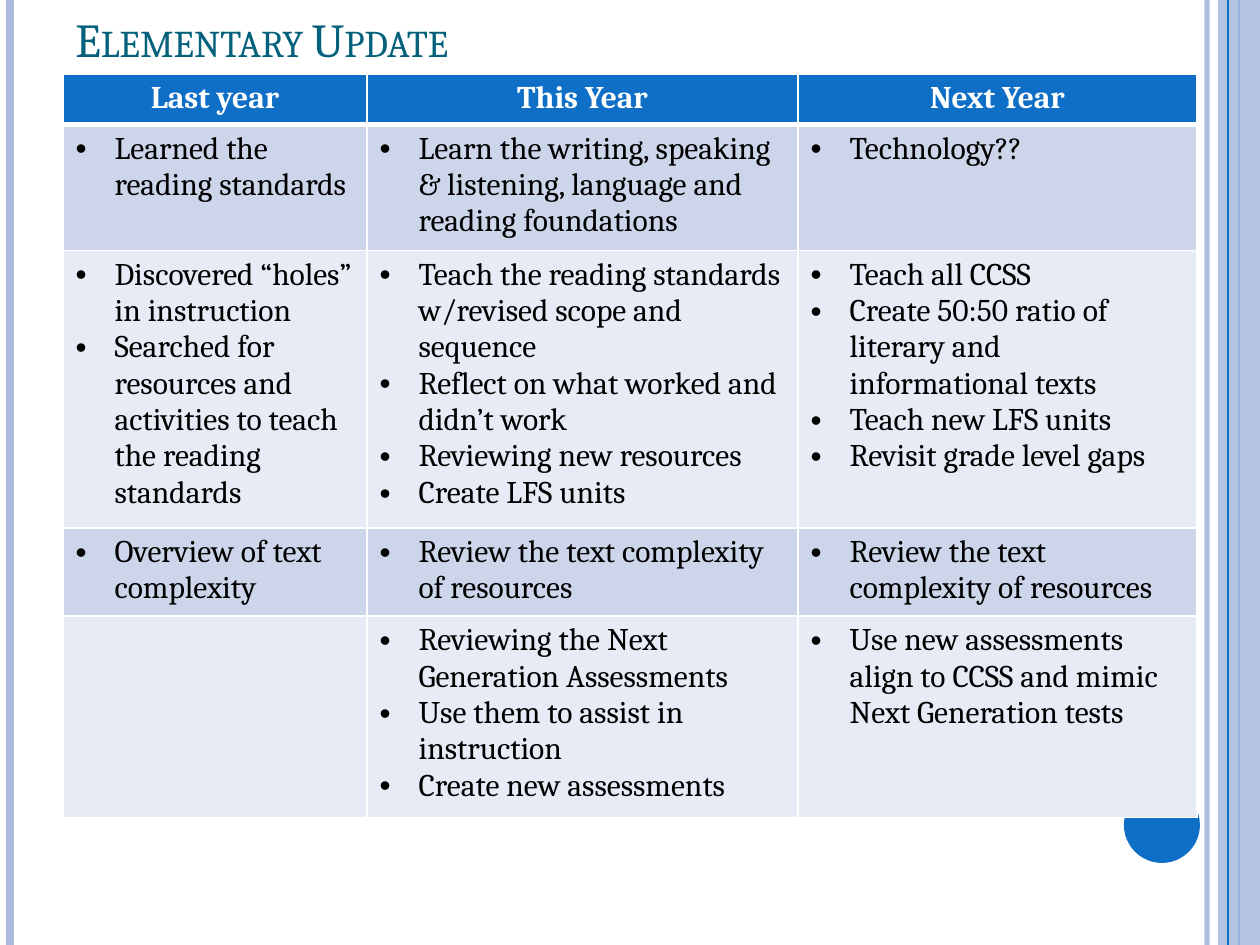
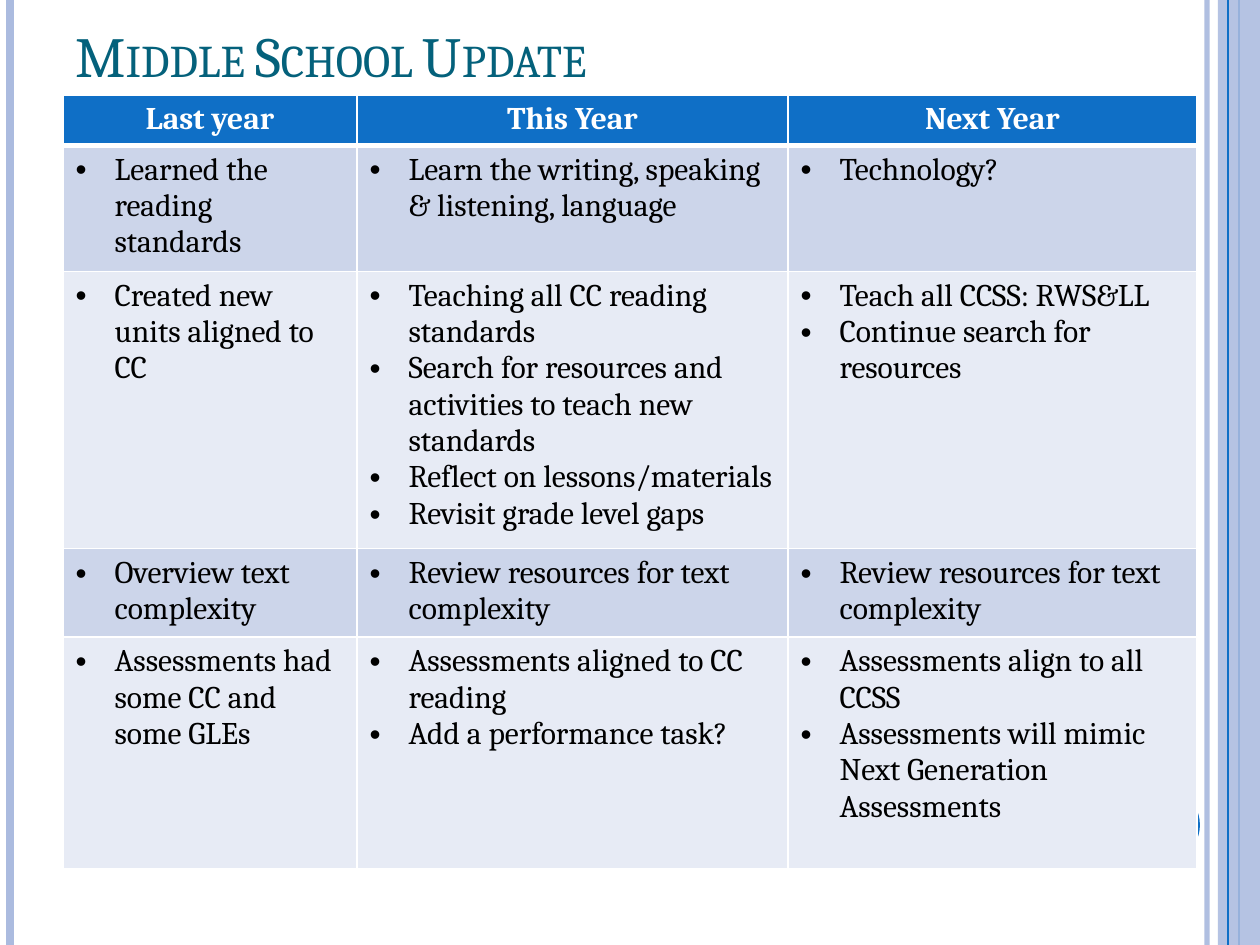
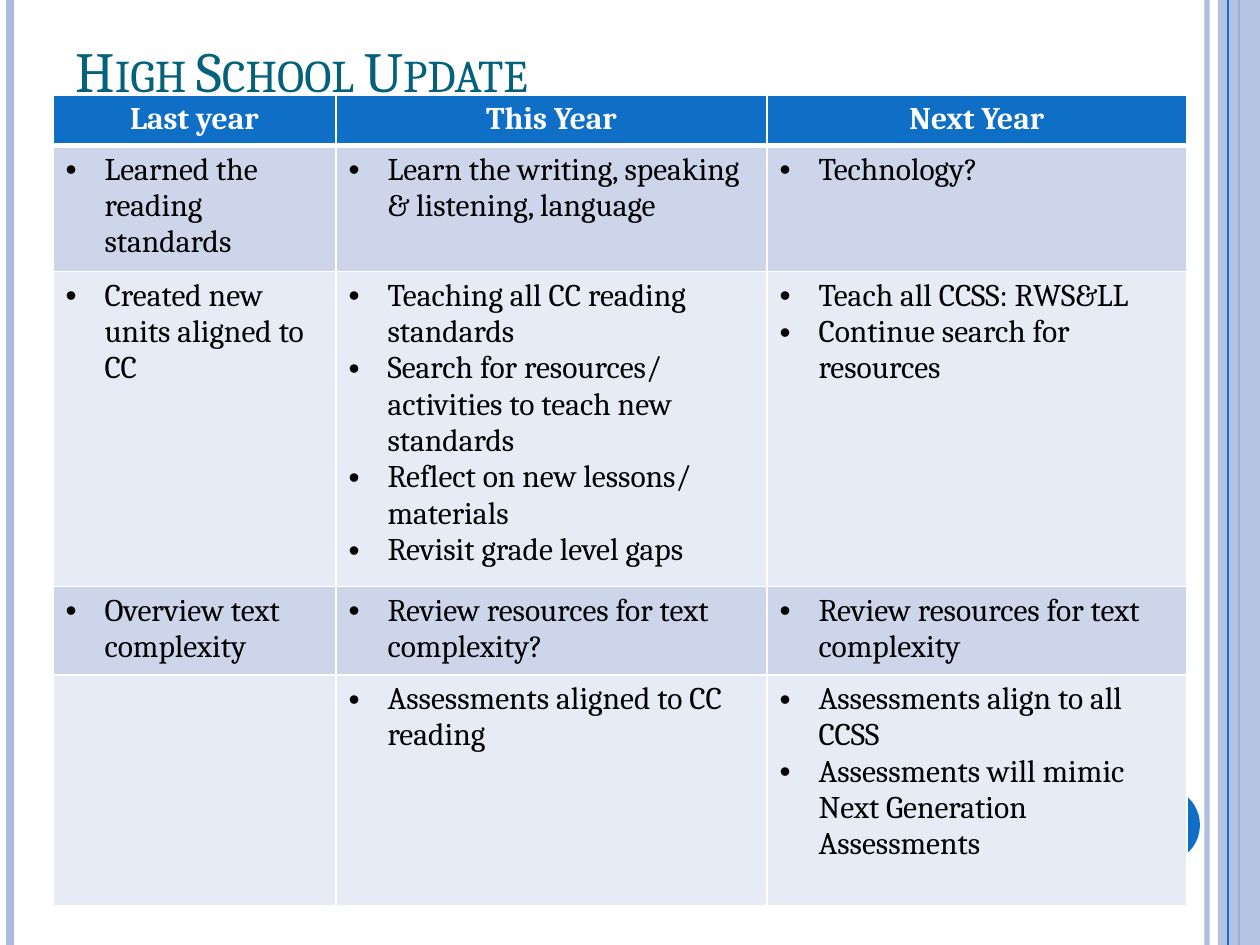
from lxml import etree
from pptx import Presentation
from pptx.dml.color import RGBColor
from pptx.enum.shapes import MSO_CONNECTOR, MSO_SHAPE
from pptx.enum.text import MSO_ANCHOR, PP_ALIGN
from pptx.oxml.ns import qn
from pptx.util import Emu, Pt

STRAIGHT = MSO_CONNECTOR.STRAIGHT
RECTANGLE, OVAL = MSO_SHAPE.RECTANGLE, MSO_SHAPE.OVAL
TOP, BOTTOM = MSO_ANCHOR.TOP, MSO_ANCHOR.BOTTOM
LEFT, CENTER = PP_ALIGN.LEFT, PP_ALIGN.CENTER

PX_PER_INCH = 126
SLIDE_W, SLIDE_H = 1260, 945
FONT = "Cambria"
COLORS = {
    "white": "FFFFFF",
    "black": "000000",
    "blue": "0F6FC6",
    "teal": "04617B",
    "lavender": "ABBBDF",
    "odd_row": "CCD5EA",
    "even_row": "E7EBF5",
}

TABLE_W = 1134
THIS_YEAR_W = 431
BULLET_INDENT = 39
HEADINGS = ["Last year", "This Year", "Next Year"]

# Each row holds three cells, and each cell is a list of bullets.
ELEMENTARY_ROWS = [
    [["Learned the reading standards"],
     ["Learn the writing, speaking & listening, language and reading foundations"],
     ["Technology??"]],
    [["Discovered “holes” in instruction",
      "Searched for resources and activities to teach the reading standards"],
     ["Teach the reading standards w/revised scope and sequence",
      "Reflect on what worked and didn’t work",
      "Reviewing new resources",
      "Create LFS units"],
     ["Teach all CCSS",
      "Create 50:50 ratio of literary and informational texts",
      "Teach new LFS units",
      "Revisit grade level gaps"]],
    [["Overview of text complexity"],
     ["Review the text complexity of resources"],
     ["Review the text complexity of resources"]],
    [[],
     ["Reviewing the Next Generation Assessments",
      "Use them to assist in instruction",
      "Create new assessments"],
     ["Use new assessments align to CCSS and mimic Next Generation tests"]],
]


def secondary_rows(search, reflect, complexity, old_assessments, new_assessments):
    """Rows shared by middle and high school, with the parts that differ."""
    return [
        [["Learned the reading standards"],
         ["Learn the writing, speaking & listening, language"],
         ["Technology?"]],
        [["Created new units aligned to CC"],
         ["Teaching all CC reading standards", search, reflect,
          "Revisit grade level gaps"],
         ["Teach all CCSS: RWS&LL", "Continue search for resources"]],
        [["Overview text complexity"],
         [complexity],
         ["Review resources for text complexity"]],
        [old_assessments,
         ["Assessments aligned to CC reading"] + new_assessments,
         ["Assessments align to all CCSS",
          "Assessments will mimic Next Generation Assessments"]],
    ]


MIDDLE_ROWS = secondary_rows(
    "Search for resources and activities to teach new standards",
    "Reflect on lessons/materials",
    "Review resources for text complexity",
    ["Assessments had some CC and some GLEs"],
    ["Add a performance task?"],
)
HIGH_ROWS = secondary_rows(
    "Search for resources/ activities to teach new standards",
    "Reflect on new lessons/ materials",
    "Review resources for text complexity?",
    [],
    [],
)

UPDATES = [
    dict(title="Elementary Update", title_box=(63, 10, TABLE_W, 63), title_size=27,
         table_at=(63, 74), last_year_w=304, heights=[50, 122, 267, 85, 195],
         rows=ELEMENTARY_ROWS),
    dict(title="Middle School Update", title_box=(63, 21, TABLE_W, 74), title_size=32.4,
         table_at=(63, 95), last_year_w=294, heights=[50, 122, 267, 85, 232],
         rows=MIDDLE_ROWS),
    dict(title="High School Update", title_box=(63, 21, TABLE_W, 89), title_size=32.4,
         table_at=(53, 95), last_year_w=283, heights=[49, 121, 303, 85, 231],
         rows=HIGH_ROWS),
]


def px(length):
    return Emu(round(length * 914400 / PX_PER_INCH))


def rgb(name):
    return RGBColor.from_string(COLORS[name])


def set_opacity(shape, percent):
    for color in shape._element.spPr.iter(qn("a:srgbClr")):
        etree.SubElement(color, qn("a:alpha"), val=str(percent * 1000))


def add_bullet(paragraph):
    properties = paragraph._p.get_or_add_pPr()
    indent = px(BULLET_INDENT)
    properties.set("marL", str(indent))
    properties.set("indent", str(-indent))
    etree.SubElement(properties, qn("a:buFont"), typeface="Arial")
    etree.SubElement(properties, qn("a:buChar"), char="•")


def write(frame, lines, size=18, color="black", bold=False, align=LEFT,
          anchor=TOP, bullets=False, small_caps=False):
    """Fill a text frame, one paragraph a line."""
    frame.word_wrap = True
    frame.vertical_anchor = anchor
    for index, line in enumerate(lines):
        paragraph = frame.add_paragraph() if index else frame.paragraphs[0]
        paragraph.alignment = align
        if bullets:
            add_bullet(paragraph)
        run = paragraph.add_run()
        run.text = line
        run.font.name = FONT
        run.font.size = Pt(size)
        run.font.bold = bold
        run.font.color.rgb = rgb(color)
        if small_caps:
            run._r.get_or_add_rPr().set("cap", "small")


def add_rule(slide, x, width, color, opacity=100):
    """Vertical line over the full height of the slide."""
    rule = slide.shapes.add_connector(STRAIGHT, px(x), 0, px(x), px(SLIDE_H))
    rule.line.width = Pt(width)
    rule.line.color.rgb = rgb(color)
    etree.SubElement(rule._element.spPr, qn("a:effectLst"))
    if opacity < 100:
        set_opacity(rule, opacity)


def add_block(slide, preset, box, color):
    block = slide.shapes.add_shape(preset, *map(px, box))
    block.shadow.inherit = False
    block.fill.solid()
    block.fill.fore_color.rgb = rgb(color)
    block.line.fill.background()
    return block


def add_frame(slide):
    """Rules, side band and disc that every slide shares."""
    add_rule(slide, 1207, 3, "lavender", opacity=93)
    add_rule(slide, 10, 4.5, "lavender")
    add_rule(slide, 1239, 1.5, "blue")
    band = add_block(slide, RECTANGLE, (1218, 0, SLIDE_W - 1218, SLIDE_H), "lavender")
    set_opacity(band, 87)
    add_rule(slide, 1228, 0.75, "blue")
    add_block(slide, OVAL, (1124, 787, 76, 76), "blue")


def add_title(slide, box, title, size):
    frame = slide.shapes.add_textbox(*map(px, box)).text_frame
    write(frame, [title], size=size, color="teal", anchor=BOTTOM, small_caps=True)


def style_cell(cell, fill, top=1, bottom=1):
    """White borders, with widths in points, and a plain fill."""
    properties = cell._tc.get_or_add_tcPr()
    for side, width in (("L", 1), ("R", 1), ("T", top), ("B", bottom)):
        border = etree.SubElement(properties, qn(f"a:ln{side}"), w=str(Pt(width)))
        paint = etree.SubElement(border, qn("a:solidFill"))
        etree.SubElement(paint, qn("a:srgbClr"), val=COLORS["white"])
    cell.fill.solid()
    cell.fill.fore_color.rgb = rgb(fill)


def add_year_table(slide, origin, last_year_w, heights, rows):
    widths = [last_year_w, THIS_YEAR_W, TABLE_W - last_year_w - THIS_YEAR_W]
    box = (*origin, TABLE_W, sum(heights))
    table = slide.shapes.add_table(len(heights), len(widths), *map(px, box)).table
    for column, width in zip(table.columns, widths):
        column.width = px(width)
    for row, height in zip(table.rows, heights):
        row.height = px(height)

    for column, heading in enumerate(HEADINGS):
        cell = table.cell(0, column)
        style_cell(cell, "blue", bottom=3)
        write(cell.text_frame, [heading], color="white", bold=True, align=CENTER)
    for index, row in enumerate(rows, start=1):
        for column, points in enumerate(row):
            cell = table.cell(index, column)
            style_cell(cell, "odd_row" if index % 2 else "even_row",
                       top=3 if index == 1 else 1)
            write(cell.text_frame, points, bullets=True)


def add_update_slide(deck, update):
    slide = deck.slides.add_slide(deck.slide_layouts[6])
    add_frame(slide)
    add_title(slide, update["title_box"], update["title"], update["title_size"])
    add_year_table(slide, update["table_at"], update["last_year_w"],
                   update["heights"], update["rows"])


def main():
    deck = Presentation()
    deck.slide_width, deck.slide_height = px(SLIDE_W), px(SLIDE_H)
    for update in UPDATES:
        add_update_slide(deck, update)
    deck.save("out.pptx")


if __name__ == "__main__":
    main()
